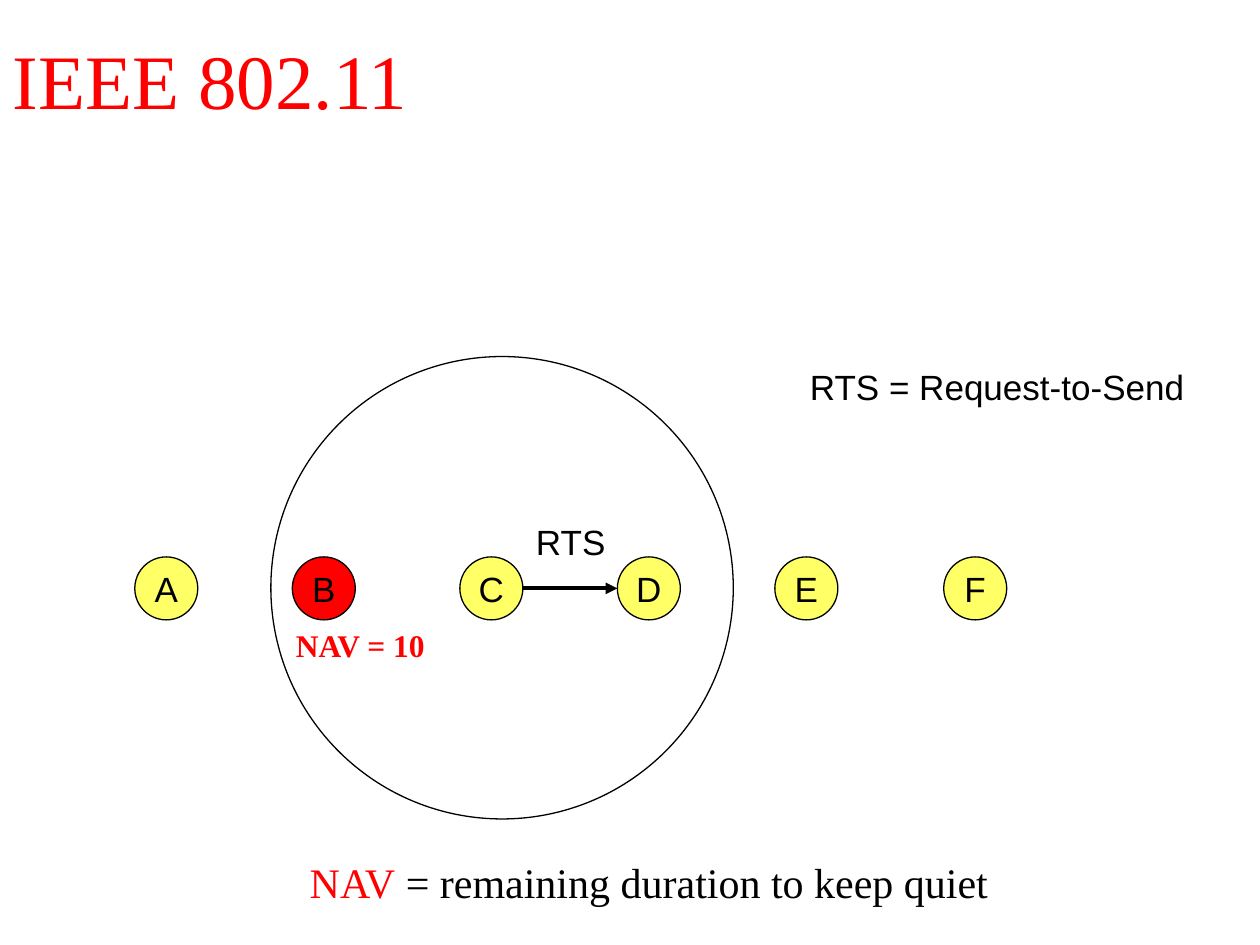
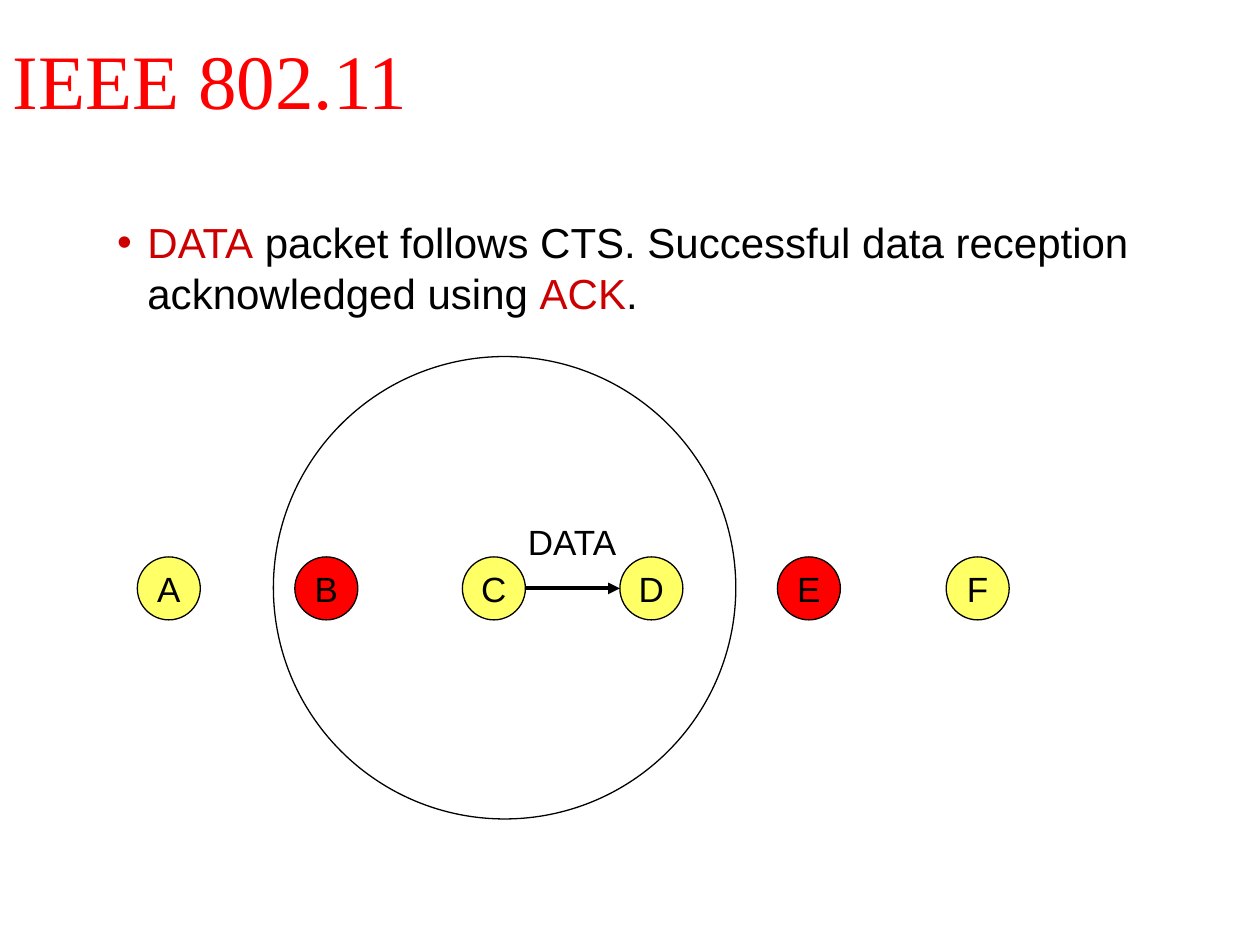
"""Build two slides on the IEEE 802.11 exchange between wireless nodes."""
from dataclasses import dataclass

from lxml.etree import SubElement
from pptx import Presentation
from pptx.dml.color import RGBColor
from pptx.enum.shapes import MSO_CONNECTOR as Connector, MSO_SHAPE as Shape
from pptx.enum.text import MSO_ANCHOR as Anchor, MSO_AUTO_SIZE as AutoSize, PP_ALIGN as Align
from pptx.oxml.ns import qn
from pptx.util import Inches, Pt


@dataclass(frozen=True)
class Theme:
    black: RGBColor = RGBColor(0, 0, 0)
    red: RGBColor = RGBColor(0xFF, 0, 0)
    dark_red: RGBColor = RGBColor(0xCC, 0, 0)
    yellow: RGBColor = RGBColor(0xFF, 0xFF, 0x66)
    sans: str = "Arial"
    serif: str = "Times New Roman"
    title_size: int = 44
    body_size: int = 24
    label_size: int = 20
    nav_size: int = 18
    thin: float = 0.75
    thick: float = 2.25


theme = Theme()


def write_runs(paragraph, runs, font_name, size, align=Align.LEFT, bold=False):
    paragraph.alignment = align
    for text, color in runs:
        run = paragraph.add_run()
        run.text = text
        run.font.name = font_name
        run.font.size = Pt(size)
        run.font.bold = bold
        run.font.color.rgb = color


def add_circle(slide, left, top, diameter, fill=None):
    circle = slide.shapes.add_shape(
        Shape.OVAL, Inches(left), Inches(top), Inches(diameter), Inches(diameter))
    circle.shadow.inherit = False
    circle.line.color.rgb = theme.black
    circle.line.width = Pt(theme.thin)
    if fill is None:
        circle.fill.background()
    else:
        circle.fill.solid()
        circle.fill.fore_color.rgb = fill
    return circle


node_offsets = {"A": -1.08, "B": 0.17, "C": 1.5, "D": 2.75, "E": 4, "F": 5.34}
node_top, node_size = 4.42, 0.5
ring_top, ring_size = 2.83, 3.67
label_style = (theme.sans, theme.label_size, Align.CENTER)

scenes = [
    {
        "layout": 5, "ring_left": 2.15, "quiet_nodes": "B", "body": [],
        "labels": [
            ((4.15, 4.08, 0.76, 0.43), [("RTS", theme.black)], label_style),
            ((6.33, 2.85, 3.17, 0.43), [("RTS = Request-to-Send", theme.black)], label_style),
            ((2.25, 4.92, 1.26, 0.4), [("NAV = 10", theme.red)],
             (theme.serif, theme.nav_size, Align.LEFT, True)),
            ((2.36, 6.75, 5.62, 0.5),
             [("NAV", theme.red), (" = remaining duration to keep quiet", theme.black)],
             (theme.serif, theme.body_size)),
        ],
    },
    {
        "layout": 1, "ring_left": 2.17, "quiet_nodes": "BE",
        "body": [
            ("DATA", theme.dark_red),
            (" packet follows CTS. Successful data reception acknowledged using ", theme.black),
            ("ACK", theme.dark_red),
            (".", theme.black),
        ],
        "labels": [((4.07, 4.08, 0.94, 0.43), [("DATA", theme.black)], label_style)],
    },
]

presentation = Presentation()
presentation.slide_width, presentation.slide_height = Inches(10), Inches(7.5)

for scene in scenes:
    slide = presentation.slides.add_slide(presentation.slide_layouts[scene["layout"]])

    title = slide.shapes.title
    title.left, title.top, title.width, title.height = 0, 0, Inches(10), Inches(1.25)
    title.text_frame.vertical_anchor = Anchor.MIDDLE
    write_runs(title.text_frame.paragraphs[0], [("IEEE 802.11", theme.red)],
               theme.serif, theme.title_size)

    if scene["body"]:
        body = slide.placeholders[1]
        body.left, body.top = Inches(0.83), Inches(1.67)
        body.width, body.height = Inches(8.33), Inches(0.9)
        body.text_frame.auto_size = AutoSize.NONE
        paragraph = body.text_frame.paragraphs[0]
        write_runs(paragraph, scene["body"], theme.sans, theme.body_size)
        properties = paragraph._p.get_or_add_pPr()
        properties.set("marL", str(Inches(0.24)))
        properties.set("indent", str(-Inches(0.24)))
        SubElement(properties, qn("a:buChar"), char="•")

    for name, offset in node_offsets.items():
        fill = theme.red if name in scene["quiet_nodes"] else theme.yellow
        node = add_circle(slide, scene["ring_left"] + offset, node_top, node_size, fill)
        node.text_frame.word_wrap = False
        node.text_frame.vertical_anchor = Anchor.MIDDLE
        write_runs(node.text_frame.paragraphs[0], [(name, theme.black)], *label_style)

    arrow_start = Inches(scene["ring_left"] + node_offsets["C"] + node_size)
    arrow_end = Inches(scene["ring_left"] + node_offsets["D"])
    arrow_height = Inches(node_top + node_size / 2)
    arrow = slide.shapes.add_connector(
        Connector.STRAIGHT, arrow_start, arrow_height, arrow_end, arrow_height)
    arrow.line.color.rgb = theme.black
    arrow.line.width = Pt(theme.thick)
    SubElement(arrow.line._get_or_add_ln(), qn("a:tailEnd"), type="triangle")
    SubElement(arrow._element.spPr, qn("a:effectLst"))

    add_circle(slide, scene["ring_left"], ring_top, ring_size)

    for box, runs, style in scene["labels"]:
        label = slide.shapes.add_textbox(*map(Inches, box))
        label.text_frame.word_wrap = False
        label.text_frame.auto_size = AutoSize.SHAPE_TO_FIT_TEXT
        write_runs(label.text_frame.paragraphs[0], runs, *style)

presentation.save("out.pptx")
